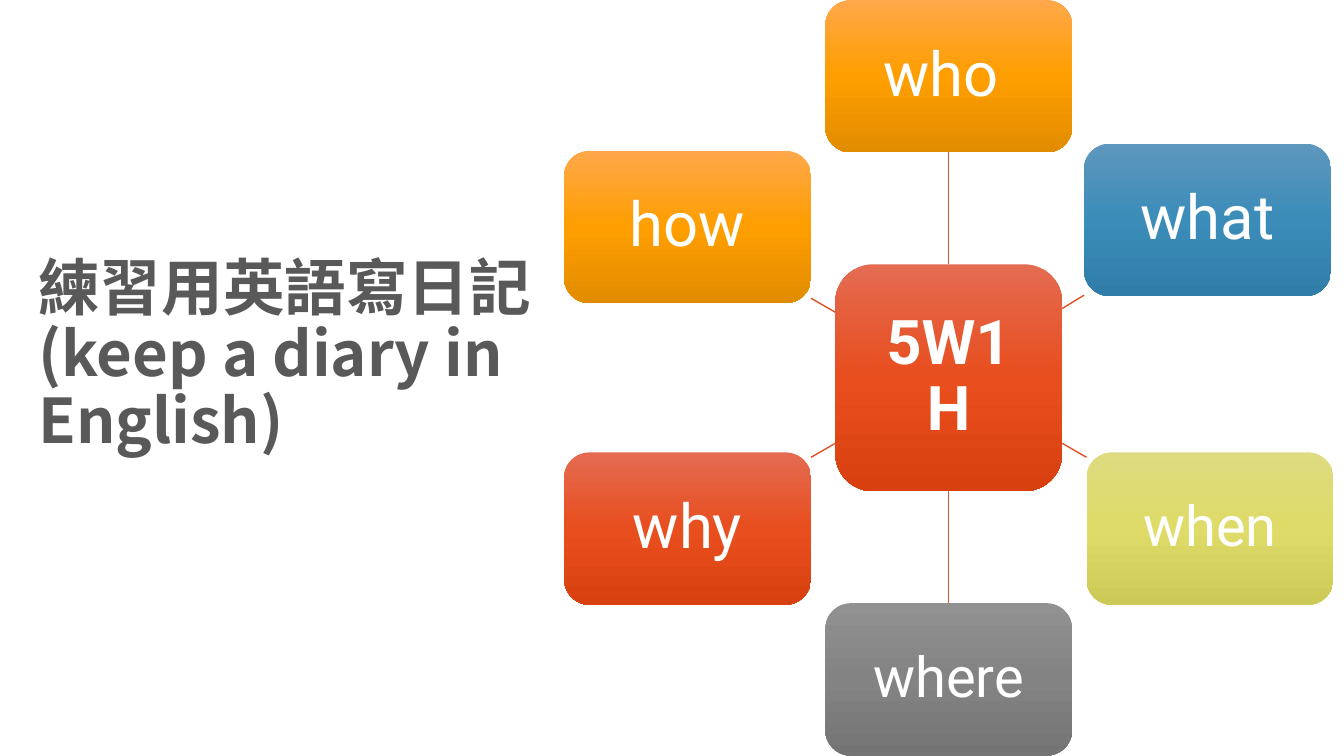
from copy import deepcopy
from math import cos, radians, sin

from lxml.etree import SubElement
from pptx import Presentation
from pptx.dml.color import RGBColor
from pptx.enum.shapes import MSO_CONNECTOR, MSO_SHAPE
from pptx.enum.text import MSO_ANCHOR, MSO_AUTO_SIZE, PP_ALIGN
from pptx.oxml.ns import qn
from pptx.util import Cm, Pt

TITLE = "練習用英語寫日記(keep a diary in English)"
TITLE_FONT, LABEL_FONT = "Noto Sans CJK SC", "Roboto"

COLORS = {"title": "595959", "label": "FFFFFF", "spoke": "DF5327"}
GRADIENTS = {
    "red": ("E46B52", "E84E1E", "D94010"),
    "orange": ("FFA84B", "FE9E00", "E28C00"),
    "blue": ("5E97BE", "3B8CB9", "307DA9"),
    "lime": ("DEDB80", "DEDB68", "CCC956"),
    "gray": ("919191", "838383", "747474"),
}

# label, gradient, text size, shift from the ring in cm; clockwise from the top
QUESTIONS = [
    ("who ", "orange", 44, (0, 0)),
    ("what", "blue", 44, (-0.06, -0.18)),
    ("when", "lime", 40, (0, 0)),
    ("where", "gray", 40, (0, 0)),
    ("why", "red", 44, (0, 0)),
    ("how", "orange", 44, (0, 0)),
]

# Lengths in cm
CENTER_X, CENTER_Y, RADIUS = 23.91, 9.52, 7.6
HUB_SIZE = (5.72, 5.72)
NODE_SIZE = (6.22, 3.84)
INSET = 0.48


def style_text(frame, size, color, font_name, bold, align):
    para = frame.paragraphs[0]
    para.alignment, para.line_spacing = align, 0.9
    span = para.runs[0]
    formats = {"name": font_name, "size": Pt(size), "bold": bold}
    for name, value in formats.items():
        setattr(span.font, name, value)
    span.font.color.rgb = RGBColor.from_string(COLORS[color])
    return span


def fill_gradient(shape, colors):
    """Fill from top to bottom with three evenly spaced colours."""
    shape.fill.gradient()
    shape.fill.gradient_angle = 270
    stop_list = shape._element.spPr.find(".//" + qn("a:gsLst"))
    stop_list.insert(1, deepcopy(stop_list[0]))
    for index, (stop, color) in enumerate(zip(shape.fill.gradient_stops, colors)):
        stop.position = index / 2
        stop.color.rgb = RGBColor.from_string(color)


def add_box(page, label, center, box_size, gradient, text_size, bold=False):
    (x, y), (width, height) = center, box_size
    box = page.shapes.add_shape(
        MSO_SHAPE.ROUNDED_RECTANGLE,
        Cm(x - width / 2), Cm(y - height / 2), Cm(width), Cm(height))
    box.shadow.inherit = False
    box.line.fill.background()
    fill_gradient(box, GRADIENTS[gradient])
    frame = box.text_frame
    frame.text = label
    frame.word_wrap = True
    frame.vertical_anchor = MSO_ANCHOR.MIDDLE
    for side in ("left", "right", "top", "bottom"):
        setattr(frame, f"margin_{side}", Cm(INSET))
    style_text(frame, text_size, "label", LABEL_FONT, bold, PP_ALIGN.CENTER)
    return box


def edge_share(box_size, dx, dy):
    """Share of the vector (dx, dy) that lies inside a box centred on its start."""
    return min(side / 2 / abs(part)
               for side, part in zip(box_size, (dx, dy)) if abs(part) > 0.01)


def add_spoke(page, hub, node, dx, dy):
    start = edge_share(HUB_SIZE, dx, dy)
    end = 1 - edge_share(NODE_SIZE, dx, dy)
    spoke = page.shapes.add_connector(
        MSO_CONNECTOR.STRAIGHT,
        Cm(CENTER_X + dx * start), Cm(CENTER_Y + dy * start),
        Cm(CENTER_X + dx * end), Cm(CENTER_Y + dy * end))
    spoke.line.color.rgb = RGBColor.from_string(COLORS["spoke"])
    spoke.line.width = Pt(1)
    SubElement(spoke._element.spPr, qn("a:effectLst"))
    if abs(dx) < 0.01:
        hub_side, node_side = (0, 2) if dy < 0 else (2, 0)
        spoke.begin_connect(hub, hub_side)
        spoke.end_connect(node, node_side)


def add_title(page):
    title = page.shapes.title
    title.left, title.top, title.width, title.height = (
        Cm(0.71), Cm(4.11), Cm(13.23), Cm(7.52))
    frame = title.text_frame
    frame.text = TITLE
    frame.word_wrap = True
    frame.auto_size = MSO_AUTO_SIZE.NONE
    frame.vertical_anchor = MSO_ANCHOR.BOTTOM
    span = style_text(frame, 44, "title", TITLE_FONT, True, PP_ALIGN.LEFT)
    SubElement(span.font._element, qn("a:ea"), typeface=TITLE_FONT)


def main():
    deck = Presentation()
    deck.slide_width, deck.slide_height = Cm(33.87), Cm(19.05)
    page = deck.slides.add_slide(deck.slide_layouts[5])
    add_title(page)
    hub = add_box(page, "5W1H", (CENTER_X, CENTER_Y), HUB_SIZE, "red", 44, bold=True)
    for index, (label, gradient, text_size, shift) in enumerate(QUESTIONS):
        angle = radians(index * 360 / len(QUESTIONS) - 90)
        dx = RADIUS * cos(angle) + shift[0]
        dy = RADIUS * sin(angle) + shift[1]
        node = add_box(page, label, (CENTER_X + dx, CENTER_Y + dy),
                       NODE_SIZE, gradient, text_size)
        add_spoke(page, hub, node, dx, dy)
    deck.save("out.pptx")


if __name__ == "__main__":
    main()
